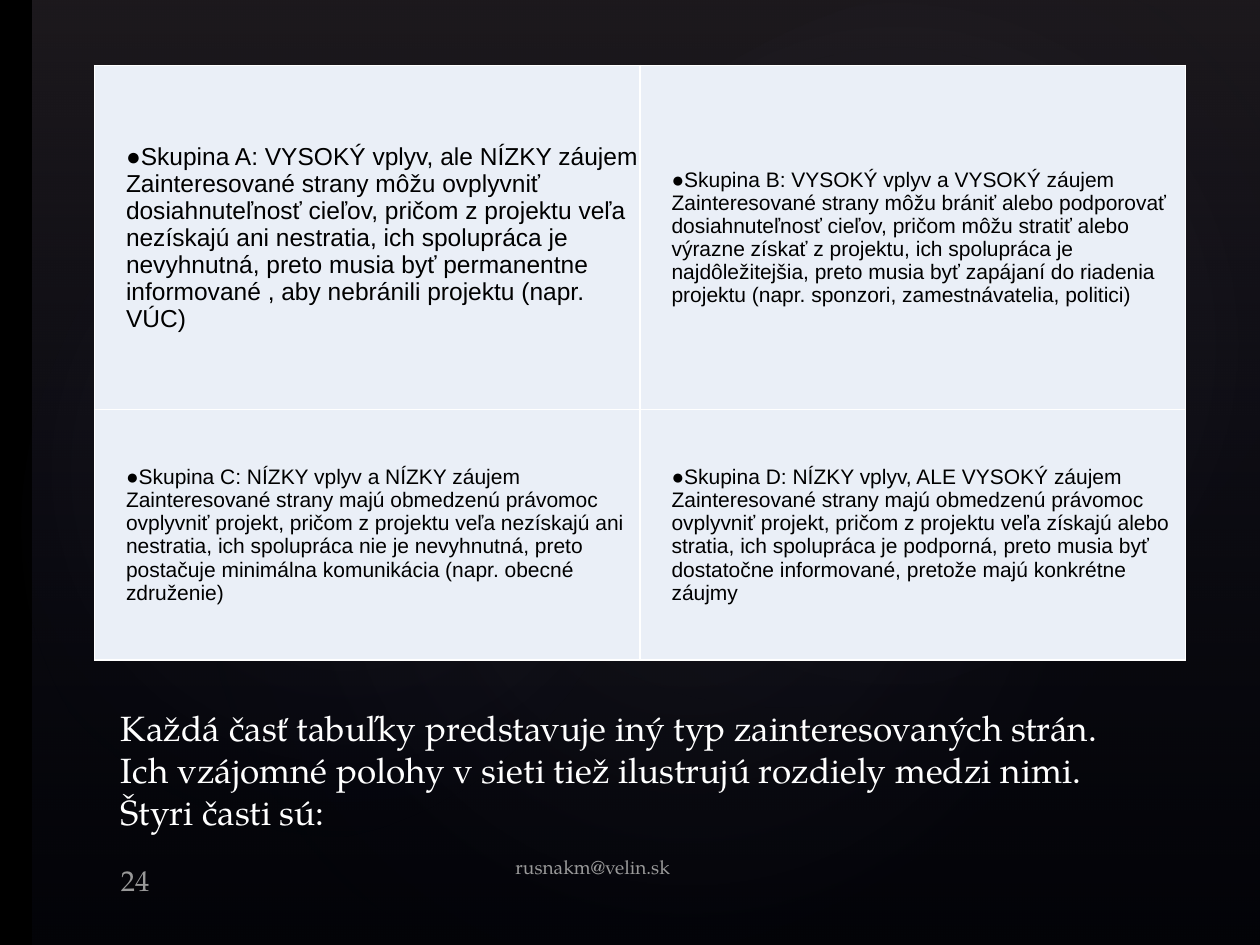
import pptx
import pptx.util
import pptx.oxml
import pptx.oxml.ns
import pptx.dml.color
import pptx.enum.shapes
import pptx.enum.text

WIDTH, HEIGHT = 10, 7.5
SERIF, SANS = "TeX Gyre Pagella", "Arial"
WHITE, BLACK, CELL_FILL, GREY = "FFFFFF", "000000", "EAEFF7", "999999"
ANCHOR = pptx.enum.text.MSO_ANCHOR
SHAPE = pptx.enum.shapes.MSO_SHAPE

TITLE = ("Každá časť tabuľky predstavuje iný typ zainteresovaných strán. "
         "Ich vzájomné polohy v sieti tiež ilustrujú rozdiely medzi nimi. "
         "Štyri časti sú:")

# heading, description, text size
GROUPS = [
    [("Skupina A: VYSOKÝ vplyv, ale NÍZKY záujem",
      "Zainteresované strany môžu ovplyvniť dosiahnuteľnosť cieľov, pričom z "
      "projektu veľa nezískajú ani nestratia, ich spolupráca je nevyhnutná, preto "
      "musia byť permanentne informované , aby nebránili projektu (napr. VÚC)", 14),
     ("Skupina B: VYSOKÝ vplyv a VYSOKÝ záujem",
      "Zainteresované strany môžu brániť alebo podporovať dosiahnuteľnosť cieľov, "
      "pričom môžu stratiť alebo výrazne získať z projektu, ich spolupráca je "
      "najdôležitejšia, preto musia byť zapájaní do riadenia projektu (napr. "
      "sponzori, zamestnávatelia, politici)", 12)],
    [("Skupina C: NÍZKY vplyv a NÍZKY záujem",
      "Zainteresované strany majú obmedzenú právomoc ovplyvniť projekt, pričom z "
      "projektu veľa nezískajú ani nestratia, ich spolupráca nie je nevyhnutná, "
      "preto postačuje minimálna komunikácia (napr. obecné združenie)", 12),
     ("Skupina D: NÍZKY vplyv, ALE VYSOKÝ záujem",
      "Zainteresované strany majú obmedzenú právomoc ovplyvniť projekt, pričom z "
      "projektu veľa získajú alebo stratia, ich spolupráca je podporná, preto "
      "musia byť dostatočne informované, pretože majú konkrétne záujmy", 12)],
]
TABLE_BOX = (0.75, 0.52, 8.66, 4.72)
ROW_HEIGHTS = (2.73, 1.99)

# box, rotation, opacity of the centre in percent
GLOWS = [((1.5, 1.14, 7.92, 6.24), 328.7, 7),
         ((-0.3, 1.28, 6.06, 4.9), 294.3, 8),
         ((3.58, 0.13, 7.09, 5.2), 328.7, 8)]

# text, box, size, anchor, bottom inset
FOOTERS = [("24", (0.85, 6.79, 0.82, 0.34), 16.3, ANCHOR.BOTTOM, 0.01),
           ("rusnakm@velin.sk", (3.98, 6.73, 2.23, 0.4), 10.9, ANCHOR.TOP, 0.06)]


def inches(values):
    return [pptx.util.Inches(v) for v in values]


def rgb(color):
    return pptx.dml.color.RGBColor.from_string(color)


def xml(body):
    """Parse one DrawingML element; body is its markup without the a: namespace."""
    head, sep, rest = body.partition(">")
    slash = "/" if head.endswith("/") else ""
    head = head.rstrip("/")
    return pptx.oxml.parse_xml(
        f"{head} {pptx.oxml.ns.nsdecls('a')}{slash}{sep}{rest}")


def add_gradient(slide, kind, box, stops, direction, rotation=0):
    """Stops are (position, colour, opacity), all but the colour in percent."""
    sp = slide.shapes.add_shape(kind, *inches(box))
    sp.shadow.inherit = False
    sp.line.fill.background()
    sp.rotation = rotation
    gs = "".join(f'<a:gs pos="{pos * 1000}"><a:srgbClr val="{color}">'
                 f'<a:alpha val="{alpha * 1000}"/></a:srgbClr></a:gs>'
                 for pos, color, alpha in stops)
    grad = xml(f'<a:gradFill rotWithShape="1"><a:gsLst>{gs}</a:gsLst>{direction}</a:gradFill>')
    sp.fill.background()
    props = sp.element.spPr
    props.replace(props.find(pptx.oxml.ns.qn("a:noFill")), grad)


def add_run(p, text, size, font, color):
    r = p.add_run()
    r.text = text
    r.font.size = pptx.util.Pt(size)
    r.font.name = font
    r.font.color.rgb = rgb(color)


def set_frame(tf, anchor, bottom=0.06):
    tf.word_wrap = True
    tf.auto_size = pptx.enum.text.MSO_AUTO_SIZE.NONE
    tf.vertical_anchor = anchor
    (tf.margin_left, tf.margin_top,
     tf.margin_right, tf.margin_bottom) = inches((0.11, 0.06, 0.11, bottom))


def fill_cell(cell, heading, description, size):
    cell.fill.solid()
    cell.fill.fore_color.rgb = rgb(CELL_FILL)
    cell.vertical_anchor = ANCHOR.MIDDLE
    (cell.margin_left, cell.margin_top,
     cell.margin_right, cell.margin_bottom) = inches((0.25, 0.01, 0.01, 0))
    props = cell._tc.get_or_add_tcPr()
    for i, side in enumerate("LRTB"):
        props.insert(i, xml(f'<a:ln{side} w="12700"><a:solidFill><a:srgbClr val="{WHITE}"/>'
                            f'</a:solidFill></a:ln{side}>'))
    p = cell.text_frame.paragraphs[0]
    p.line_spacing = 0.98
    bullet = p._p.get_or_add_pPr()
    bullet.set("marL", "0")
    bullet.set("indent", "0")
    bullet.append(xml(f'<a:buClr><a:srgbClr val="{BLACK}"/></a:buClr>'))
    bullet.append(xml('<a:buFont typeface="Arial"/>'))
    bullet.append(xml('<a:buChar char="●"/>'))
    add_run(p, heading, size, SANS, BLACK)
    p.add_line_break()
    add_run(p, description, size, SANS, BLACK)


def add_groups(slide):
    table = slide.shapes.add_table(2, 2, *inches(TABLE_BOX)).table
    table.first_row = table.horz_banding = False
    for column in table.columns:
        column.width = pptx.util.Inches(TABLE_BOX[2] / 2)
    for i, (height, groups) in enumerate(zip(ROW_HEIGHTS, GROUPS)):
        table.rows[i].height = pptx.util.Inches(height)
        for j, group in enumerate(groups):
            fill_cell(table.cell(i, j), *group)


def main():
    prs = pptx.Presentation()
    prs.slide_width, prs.slide_height = inches((WIDTH, HEIGHT))
    slide = prs.slides.add_slide(prs.slide_layouts[5])
    slide.background.fill.solid()
    slide.background.fill.fore_color.rgb = rgb(BLACK)

    add_gradient(slide, SHAPE.RECTANGLE, (0.26, 0, WIDTH - 0.26, HEIGHT),
                 [(0, "504652", 36), (100, "242852", 10)], '<a:lin ang="5400000" scaled="0"/>')
    centre = ('<a:path path="circle"><a:fillToRect l="50000" t="50000" '
              'r="50000" b="50000"/></a:path>')
    for box, rotation, alpha in GLOWS:
        add_gradient(slide, SHAPE.OVAL, box,
                     [(0, "C4BCC6", alpha), (58, "242852", 0), (100, "242852", 0)],
                     centre, rotation)

    title = slide.shapes.title
    slide.shapes._spTree.append(title.element)  # in front of the backdrop
    title.left, title.top, title.width, title.height = inches((0.85, 5.67, 8.25, 1))
    set_frame(title.text_frame, ANCHOR.BOTTOM)
    p = title.text_frame.paragraphs[0]
    p.alignment = pptx.enum.text.PP_ALIGN.LEFT
    p.line_spacing = pptx.util.Pt(24)
    add_run(p, TITLE, 20, SERIF, WHITE)

    for text, box, size, anchor, bottom in FOOTERS:
        tf = slide.shapes.add_textbox(*inches(box)).text_frame
        set_frame(tf, anchor, bottom)
        add_run(tf.paragraphs[0], text, size, SERIF, GREY)

    add_groups(slide)
    prs.save("out.pptx")


if __name__ == "__main__":
    main()
